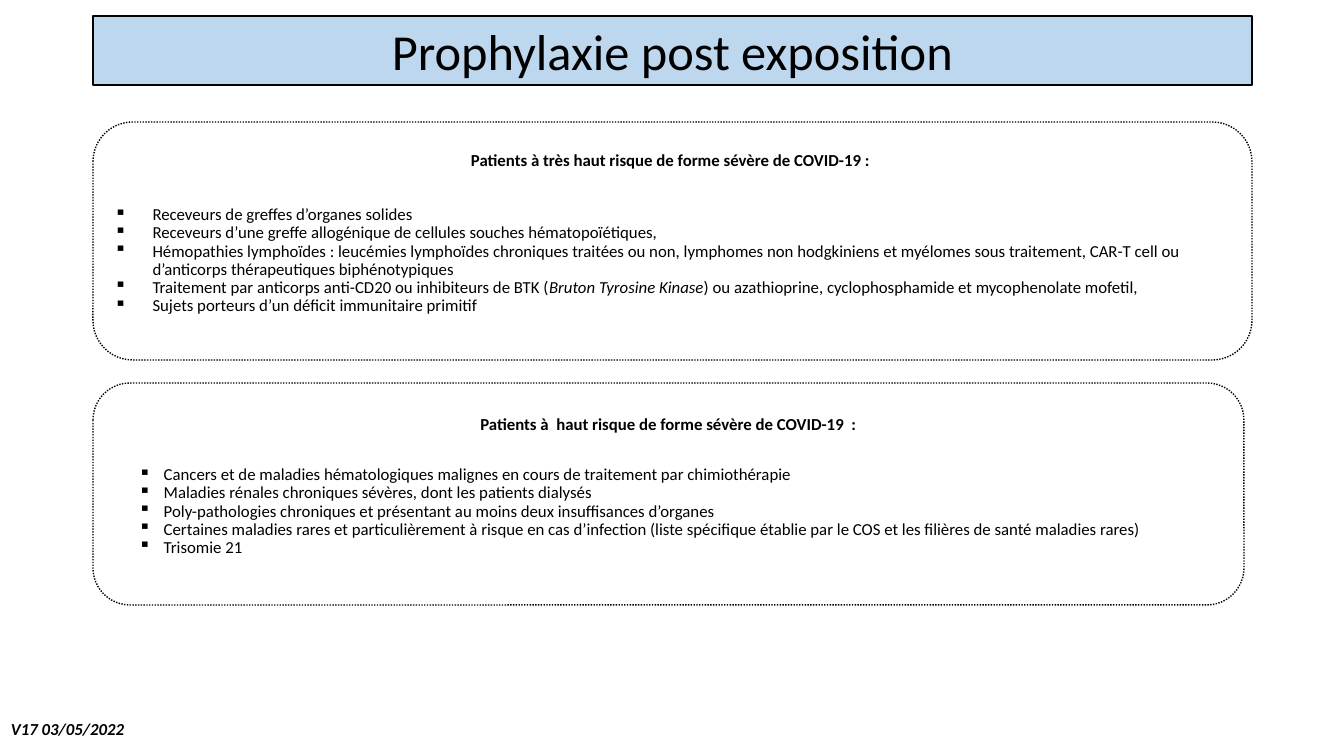
from pptx import Presentation
from pptx.dml.color import RGBColor
from pptx.enum.dml import MSO_LINE
from pptx.enum.shapes import MSO_SHAPE
from pptx.enum.text import MSO_ANCHOR, MSO_AUTO_SIZE, PP_ALIGN
from pptx.util import Emu, Pt
from lxml.etree import SubElement
from pptx.oxml.ns import qn

BLACK = RGBColor(0x00, 0x00, 0x00)
WHITE = RGBColor(0xFF, 0xFF, 0xFF)
PALE_BLUE = RGBColor(0xBD, 0xD7, 0xEE)
FONT = "Calibri"
EMU_PER_PX = 914400 / 100.8

VERY_HIGH_RISK = [
    "Receveurs de greffes d’organes solides",
    "Receveurs d’une greffe allogénique de cellules souches hématopoïétiques,",
    "Hémopathies lymphoïdes : leucémies lymphoïdes chroniques traitées ou non, "
    "lymphomes non hodgkiniens et myélomes sous traitement, CAR-T cell ou "
    "d’anticorps thérapeutiques biphénotypiques",
    "Traitement par anticorps anti-CD20 ou inhibiteurs de BTK (*Bruton Tyrosine Kinase*) "
    "ou azathioprine, cyclophosphamide et mycophenolate mofetil,",
    "Sujets porteurs d’un déficit immunitaire primitif",
]
HIGH_RISK = [
    "Cancers et de maladies hématologiques malignes en cours de traitement par chimiothérapie",
    "Maladies rénales chroniques sévères, dont les patients dialysés",
    "Poly-pathologies chroniques et présentant au moins deux insuffisances d’organes",
    "Certaines maladies rares et particulièrement à risque en cas d’infection "
    "(liste spécifique établie par le COS et les filières de santé maladies rares)",
    "Trisomie 21",
]


def px(length):
    return Emu(round(length * EMU_PER_PX))


def place(shape, left, top, width, height):
    shape.left, shape.top = px(left), px(top)
    shape.width, shape.height = px(width), px(height)


def style_span(span, size, bold=False, italic=False):
    font = span.font
    font.name, font.size = FONT, Pt(size)
    font.bold, font.italic = bold, italic
    font.color.rgb = BLACK


def outline(shape, fill, width):
    shape.fill.solid()
    shape.fill.fore_color.rgb = fill
    shape.line.color.rgb = BLACK
    shape.line.width = Pt(width)


def add_title(page, text):
    """Turn the title placeholder into a rounded banner."""
    title = page.shapes.title
    place(title, 93, 16, 1159, 69)
    geometry = SubElement(title._element.spPr, qn("a:prstGeom"), prst="roundRect")
    SubElement(geometry, qn("a:avLst"))
    outline(title, PALE_BLUE, 1.5)
    frame = title.text_frame
    frame.text = text
    frame.auto_size = MSO_AUTO_SIZE.NONE
    frame.vertical_anchor = MSO_ANCHOR.MIDDLE
    para = frame.paragraphs[0]
    para.alignment = PP_ALIGN.CENTER
    style_span(para.runs[0], 36)


def add_bullet(frame, text, margin, hanging):
    """Add a bulleted line; text between asterisks is italic."""
    para = frame.add_paragraph()
    para.alignment = PP_ALIGN.LEFT
    para.line_spacing = 0.9
    properties = para._p.get_or_add_pPr()
    properties.set("marL", str(px(margin)))
    properties.set("indent", str(-px(hanging)))
    SubElement(properties, qn("a:buChar"), char="▪")
    for index, part in enumerate(text.split("*")):
        span = para.add_run()
        span.text = part
        style_span(span, 12, italic=index % 2 == 1)


def add_risk_box(page, area, heading, gap, bullets, margin, hanging):
    """Add a dotted box with a heading, a gap in points and a bullet list."""
    box = page.shapes.add_shape(MSO_SHAPE.ROUNDED_RECTANGLE, *map(px, area))
    box.shadow.inherit = False
    outline(box, WHITE, 1)
    box.line.dash_style = MSO_LINE.ROUND_DOT
    frame = box.text_frame
    frame.word_wrap = True
    frame.vertical_anchor = MSO_ANCHOR.MIDDLE
    frame.margin_bottom = px(20)
    frame.text = heading
    para = frame.paragraphs[0]
    para.alignment = PP_ALIGN.CENTER
    para.line_spacing = 0.9
    para.space_after = Pt(gap)
    style_span(para.runs[0], 12, bold=True)
    for bullet in bullets:
        add_bullet(frame, bullet, margin, hanging)


def add_version(page, text):
    label = page.shapes.add_textbox(px(1), px(714), px(136), px(30))
    frame = label.text_frame
    frame.word_wrap = False
    frame.text = text
    style_span(frame.paragraphs[0].runs[0], 12, bold=True, italic=True)


def main():
    deck = Presentation()
    deck.slide_width, deck.slide_height = px(1344), px(756)
    page = deck.slides.add_slide(deck.slide_layouts[5])
    add_title(page, "Prophylaxie post exposition")
    add_risk_box(page, (93, 122, 1159, 238),
                 "Patients à très haut risque de forme sévère de COVID-19 : ",
                 26, VERY_HIGH_RISK, 38, 38)
    add_risk_box(page, (93, 383, 1151, 222),
                 "Patients à  haut risque de forme sévère de COVID-19  :",
                 23, HIGH_RISK, 50, 25)
    add_version(page, "V17 03/05/2022")
    deck.save("out.pptx")


if __name__ == "__main__":
    main()
